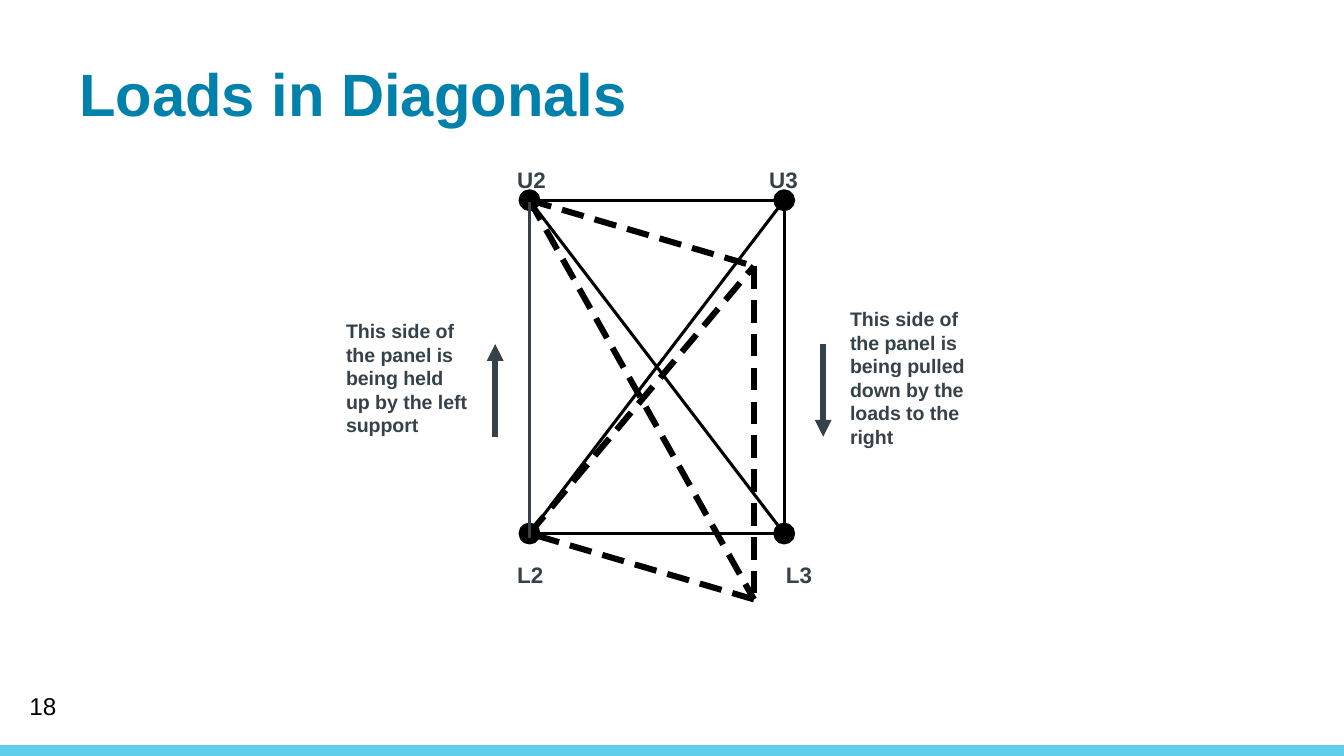
from math import hypot
from lxml.etree import SubElement
from pptx import Presentation
from pptx.dml.color import RGBColor as RGB
from pptx.enum.shapes import MSO_CONNECTOR as LINK, MSO_SHAPE as SHAPE
from pptx.enum.text import MSO_ANCHOR as ANCHOR
from pptx.oxml.ns import qn
from pptx.util import Pt

SCALE = 4572
WIDE, HIGH = 2000, 1125
HEX = {"blue": "0081AB", "slate": "36424A", "black": "000000", "bar": "5FCEEA"}
TITLE = {"size": Pt(32), "bold": True, "name": "Arial"}
LABEL = {"size": Pt(12), "bold": True, "name": "Arial"}
NOTE = {"size": Pt(10.5), "bold": True, "name": "Arial"}
COUNT = {"size": Pt(13), "bold": False, "name": "Arial"}
DASH, STEP = 33.6, 50.4
DOT = 28


def emu(*nums):
    """Turn px lengths into EMU."""
    return [round(n * SCALE) for n in nums]


def tint(name):
    """Give the colour of that name."""
    return RGB.from_string(HEX[name])


def text(slide, box, words, form, ink, pad=(20, 10, 20, 10), anchor=ANCHOR.TOP, wrap=True):
    """Place one styled line or paragraph of text in a box."""
    frame = slide.shapes.add_textbox(*emu(*box)).text_frame
    sides = ("margin_left", "margin_top", "margin_right", "margin_bottom")
    for key, val in zip(sides, emu(*pad)):
        setattr(frame, key, val)
    frame.word_wrap, frame.vertical_anchor = wrap, anchor
    run = frame.paragraphs[0].add_run()
    run.text = words
    for key, val in form.items():
        setattr(run.font, key, val)
    run.font.color.rgb = tint(ink)


def line(slide, start, end, width, ink="black", arrow=False):
    """Draw a straight line, with an arrowhead at its end if asked."""
    link = slide.shapes.add_connector(LINK.STRAIGHT, *emu(*start, *end))
    link.line.width = Pt(width)
    link.line.color.rgb = tint(ink)
    if arrow:
        SubElement(link.line._get_or_add_ln(), qn("a:tailEnd"), type="triangle")
    SubElement(link._element.spPr, qn("a:effectLst"))


def solid(slide, kind, box, ink):
    """Draw a filled preset shape and return it."""
    shape = slide.shapes.add_shape(kind, *emu(*box))
    shape.shadow.inherit = False
    shape.fill.solid()
    shape.fill.fore_color.rgb = tint(ink)
    shape.line.fill.background()
    return shape


def dashes(slide, start, end):
    """Draw a row of thick dashes from start to end."""
    (x, y), (dx, dy) = start, (end[0] - start[0], end[1] - start[1])
    span = hypot(dx, dy)
    at = 0
    while at < span:
        a, b = at / span, min(at + DASH, span) / span
        line(slide, (x + dx * a, y + dy * a), (x + dx * b, y + dy * b), 3.25)
        at += STEP


def panel(slide, box):
    """Draw the truss panel, its bent outline and its corner labels."""
    x, y, w, h = box
    u2, u3, l2, l3 = (x, y), (x + w, y), (x, y + h), (x + w, y + h)
    bent_u, bent_l = (x + 334, y + 98), (x + 334, y + h + 98)
    for cx, cy in (u2, u3, l2, l3):
        dot = solid(slide, SHAPE.OVAL, (cx - DOT / 2, cy - DOT / 2, DOT, DOT), "black")
        dot.line.color.rgb = tint("black")
        dot.line.width = Pt(1.63)
    for start, end in ((u2, u3), (u3, l3), (l3, l2), (u2, l3), (l2, u3)):
        line(slide, start, end, 1.63)
    for start, end in ((u2, bent_u), (bent_u, bent_l), (bent_l, l2), (u2, bent_l), (l2, bent_u)):
        dashes(slide, start, end)
    line(slide, (x, y + 2), (x, y + h + 6), 1.5, "slate")
    marks = (("U2", -38, -60, 112), ("U3", 337, -60, 88), ("L2", -38, 528, 100), ("L3", 362, 528, 88))
    for word, dx, dy, wide in marks:
        text(slide, (x + dx, y + dy, wide, 60), word, LABEL, "slate", wrap=False)


def side(slide, box, words, shift, rise):
    """Place a side note with its up or down arrow."""
    x, y, w, h = box
    text(slide, box, words, NOTE, "slate", (14, 8, 14, 8), ANCHOR.MIDDLE)
    ends = [(x + shift, y + 75), (x + shift, y + 213)]
    if rise:
        ends.reverse()
    line(slide, *ends, 3, "slate", True)


def frame(slide, box):
    """Place the title, the page number and the bottom bar."""
    x, y, w, h = box
    solid(slide, SHAPE.RECTANGLE, (x, y + h - 16, w, 16), "bar")
    text(slide, (x + 118, y + 74, 1798, 114), "Loads in Diagonals", TITLE, "blue", (0, 10, 20, 10))
    text(slide, (x + 24, y + h - 105, 450, 60), "18", COUNT, "black", anchor=ANCHOR.MIDDLE)


def main():
    """Build the slide and save it."""
    deck = Presentation()
    deck.slide_width, deck.slide_height = emu(WIDE, HIGH)
    slide = deck.slides.add_slide(deck.slide_layouts[6])
    frame(slide, (0, 0, WIDE, HIGH))
    side(slide, (501, 437, 212, 250),
         "This side of the panel is being held up by the left support", 236, True)
    side(slide, (1251, 437, 212, 250),
         "This side of the panel is being pulled down by the loads to the right", -26, False)
    panel(slide, (788, 298, 379, 496))
    deck.save("out.pptx")


if __name__ == "__main__":
    main()
